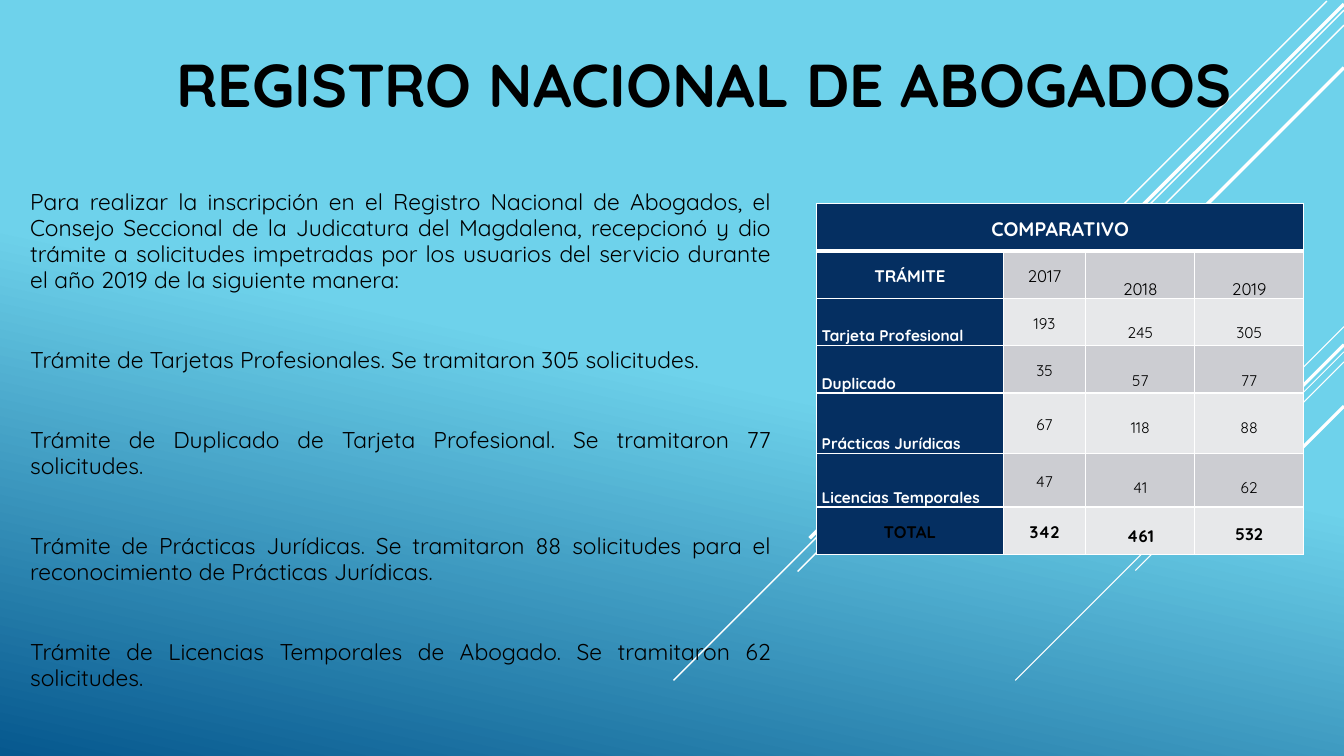
import pptx
import pptx.util
import pptx.dml.color
import pptx.enum.shapes
import pptx.enum.text
import pptx.oxml
import pptx.oxml.ns

RGB = pptx.dml.color.RGBColor
WHITE = RGB(0xFF, 0xFF, 0xFF)
BLACK = RGB(0, 0, 0)
SKY = RGB(0x6E, 0xD2, 0xEB)
DEEP = RGB(0x06, 0x58, 0x8E)
NAVY = RGB(0x05, 0x2F, 0x61)
GRAY = RGB(0xCC, 0xCD, 0xD2)
PALE = RGB(0xE7, 0xE8, 0xEA)

PX = 9144
ALIGN = pptx.enum.text.PP_ALIGN
ANCHOR = pptx.enum.text.MSO_ANCHOR
NS = pptx.oxml.ns.nsdecls("a")

RAYS = [
    (1333, 324, 100, 0.75),
    (1333, 349, 326, 0.75),
    (1333, 359, 207, 0.75),
    (1333, 342, 191, 2.25),
    (1333, 403, 139, 2.25),
    (1316, 1, 416, 1),
    (1333, 10, 665, 1),
    (1333, 25, 542, 1),
    (1333, 4, 530, 2.5),
    (1333, 67, 475, 2.5),
]

TITLE = "REGISTRO NACIONAL DE ABOGADOS"
BODY = [
    "Para realizar la inscripción en el Registro Nacional de Abogados, el "
    "Consejo Seccional de la Judicatura del Magdalena, recepcionó y dio "
    "trámite a solicitudes impetradas por los usuarios del servicio durante "
    "el año 2019 de la siguiente manera:",
    "Trámite de Tarjetas Profesionales. Se tramitaron 305 solicitudes.",
    "Trámite de Duplicado de Tarjeta Profesional. Se tramitaron 77 solicitudes.",
    "Trámite de Prácticas Jurídicas. Se tramitaron 88 solicitudes para el "
    "reconocimiento de Prácticas Jurídicas.",
    "Trámite de Licencias Temporales de Abogado. Se tramitaron 62 solicitudes.",
]
ROWS = [
    ["COMPARATIVO", "", "", ""],
    ["TRÁMITE", "2017", "2018", "2019"],
    ["Tarjeta Profesional", "193", "245", "305"],
    ["Duplicado", "35", "57", "77"],
    ["Prácticas Jurídicas", "67", "118", "88"],
    ["Licencias Temporales", "47", "41", "62"],
    ["TOTAL", "342", "461", "532"],
]
COLS = [185, 82, 108, 108]
HIGH = [47, 47, 47, 47, 60, 53, 47]
DROPS = {1: (24, 24), 6: (16, 14)}


def assign(item, **vals):
    for name, val in vals.items():
        setattr(item, name, val)


class Deck:
    font = "Quicksand"

    def __init__(self, wide, high):
        self.prs = pptx.Presentation()
        assign(self.prs, slide_width=wide * PX, slide_height=high * PX)
        self.slide = self.prs.slides.add_slide(self.prs.slide_layouts[6])

    def back(self, stops, angle):
        fill = self.slide.background.fill
        fill.gradient()
        fill.gradient_angle = angle
        for stop, (pos, color) in zip(fill.gradient_stops, stops):
            stop.position = pos
            stop.color.rgb = color

    def ray(self, x, y, size, width):
        kind = pptx.enum.shapes.MSO_CONNECTOR.STRAIGHT
        ends = [n * PX for n in (x, y, x - size, y + size)]
        line = self.slide.shapes.add_connector(kind, *ends)
        line.line.color.rgb = WHITE
        line.line.width = pptx.util.Pt(width)
        line._element.spPr.append(pptx.oxml.parse_xml(f"<a:effectLst {NS}/>"))

    def put(self, para, text, size, color, bold=False, **form):
        assign(para, **form)
        run = para.add_run()
        run.text = text
        assign(run.font, name=self.font, size=pptx.util.Pt(size), bold=bold)
        run.font.color.rgb = color

    def text(self, box, texts, size, anchor, bold=False, **form):
        frame = self.slide.shapes.add_textbox(*[n * PX for n in box]).text_frame
        assign(frame, word_wrap=True, vertical_anchor=anchor)
        for i, text in enumerate(texts):
            para = frame.add_paragraph() if i else frame.paragraphs[0]
            self.put(para, text, size, BLACK, bold, **form)

    def edge(self, cell, base):
        props = cell._tc.get_or_add_tcPr()
        for i, side in enumerate(("lnL", "lnR", "lnT", "lnB")):
            width = pptx.util.Pt(base if side == "lnB" else 1)
            props.insert(i, pptx.oxml.parse_xml(
                f'<a:{side} {NS} w="{width}"><a:solidFill>'
                f'<a:srgbClr val="{WHITE}"/></a:solidFill></a:{side}>'))

    def cell(self, cell, text, fill, anchor, drop, base, *look, **form):
        assign(cell, margin_left=5 * PX, margin_right=5 * PX,
               margin_top=drop * PX, margin_bottom=0, vertical_anchor=anchor)
        cell.fill.solid()
        cell.fill.fore_color.rgb = fill
        self.edge(cell, base)
        if text:
            self.put(cell.text_frame.paragraphs[0], text, *look,
                     line_spacing=1.15, **form)

    def table(self, x, y, rows, cols, high):
        box = [n * PX for n in (x, y, sum(cols), sum(high))]
        grid = self.slide.shapes.add_table(len(rows), len(cols), *box).table
        for col, size in zip(grid.columns, cols):
            col.width = size * PX
        for row, size in zip(grid.rows, high):
            row.height = size * PX
        last = len(rows) - 1
        for r, row in enumerate(rows):
            for c, text in enumerate(row):
                head = r == 0 or c == 0
                label = c == 0 and 1 < r < last
                fill = NAVY if head else GRAY if r % 2 else PALE
                color = WHITE if head and r < last else BLACK
                size = 14 if r == 0 else 12 if r in (1, last) else 11
                low = r > 0 and c > 1
                drop = DROPS.get(r, (22, 22))[c - 2] if low else 0
                anchor = (ANCHOR.BOTTOM if label else
                          ANCHOR.TOP if low else ANCHOR.MIDDLE)
                self.cell(grid.cell(r, c), text, fill, anchor, drop,
                          1 if r else 3, size, color, head or r == last,
                          alignment=ALIGN.LEFT if label else ALIGN.CENTER)
        grid.cell(0, 0).merge(grid.cell(0, len(cols) - 1))


def main():
    deck = Deck(1333, 750)
    deck.back([(0.49, SKY), (1, DEEP)], 258)
    for ray in RAYS:
        deck.ray(*ray)
    deck.text((83, 43, 1230, 82), [TITLE], 43.2, ANCHOR.BOTTOM, True,
              alignment=ALIGN.CENTER, line_spacing=0.9)
    deck.text((20, 183, 755, 515), BODY, 16.3, ANCHOR.TOP,
              alignment=ALIGN.JUSTIFY, line_spacing=0.95,
              space_after=pptx.util.Pt(38.5))
    deck.table(810, 202, ROWS, COLS, HIGH)
    deck.prs.save("out.pptx")


if __name__ == "__main__":
    main()
